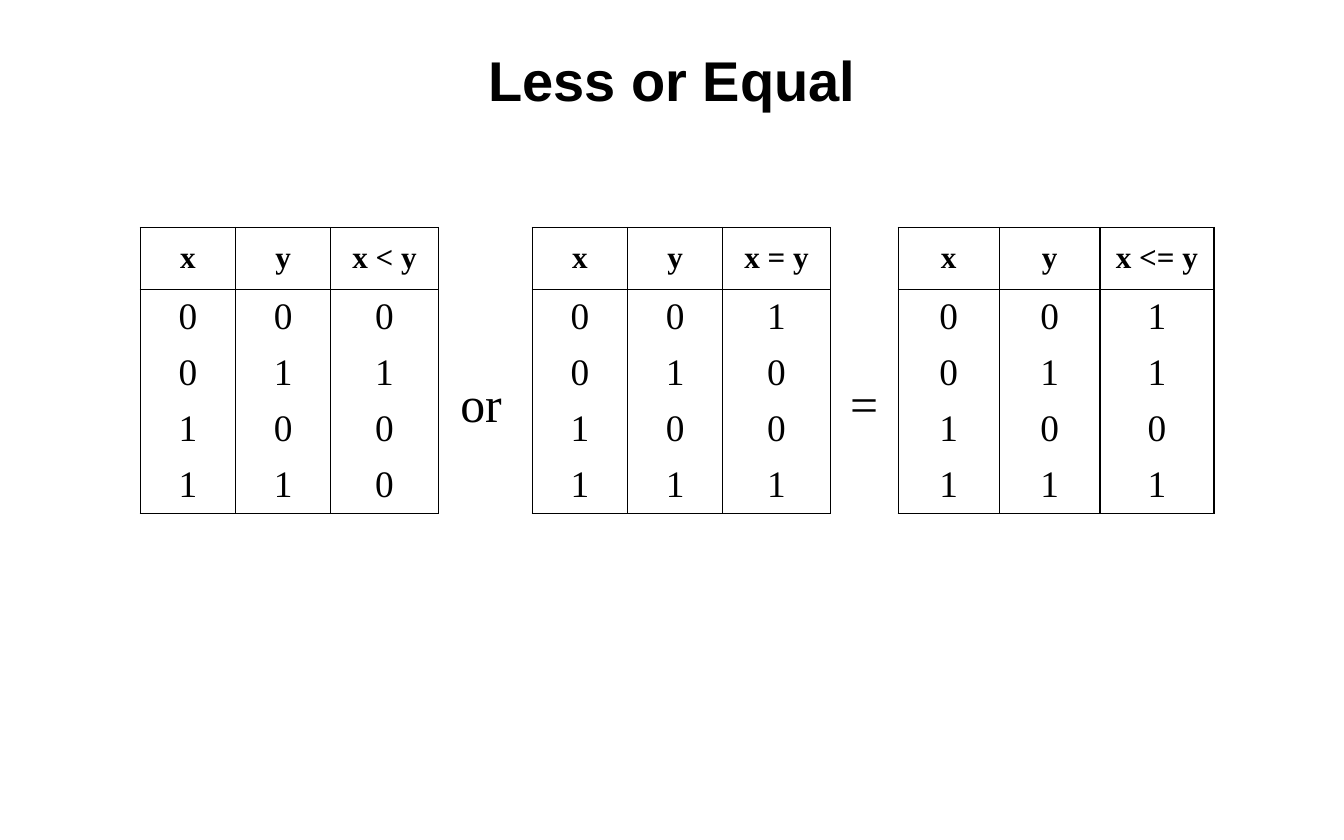
from dataclasses import dataclass
from itertools import product

from lxml.etree import SubElement
from pptx import Presentation
from pptx.dml.color import RGBColor
from pptx.enum.text import MSO_ANCHOR, MSO_AUTO_SIZE, PP_ALIGN
from pptx.oxml.ns import qn
from pptx.util import Cm, Pt


@dataclass(frozen=True)
class Theme:
    ink: RGBColor = RGBColor(0, 0, 0)
    sans: str = "Arial"
    serif: str = "Times New Roman"
    title: Pt = Pt(36)
    sign: Pt = Pt(32)
    head: Pt = Pt(20)
    body: Pt = Pt(24)
    line: Pt = Pt(1)


THEME = Theme()
TOP = Cm(5.16)
HEAD = Cm(1.4)
ROW = Cm(1.27)


def style(para, face, size, bold=False, align=PP_ALIGN.CENTER):
    para.alignment = align
    font = para.font
    font.name, font.size, font.bold = face, size, bold
    font.color.rgb = THEME.ink


def place(shape, left, top, width, height):
    shape.left, shape.top = left, top
    shape.width, shape.height = width, height


def add_title(slide, text, box):
    title = slide.shapes.title
    place(title, *box)
    frame = title.text_frame
    frame.text = text
    frame.vertical_anchor = MSO_ANCHOR.MIDDLE
    style(frame.paragraphs[0], THEME.sans, THEME.title, True)


def set_edges(cell, drawn):
    """Line the sides named in drawn (of L, R, T, B) and clear the others."""
    props = cell._tc.get_or_add_tcPr()
    for spot, side in enumerate("LRTB"):
        line = SubElement(props, qn(f"a:ln{side}"), w=str(THEME.line))
        if side in drawn:
            fill = SubElement(line, qn("a:solidFill"))
            SubElement(fill, qn("a:srgbClr"), val=str(THEME.ink))
        else:
            SubElement(line, qn("a:noFill"))
        props.insert(spot, line)


def add_truth(slide, label, rule, left, top, widths):
    """Table of the values of rule for every pair of bits."""
    pairs = product((0, 1), repeat=2)
    rows = [("x", "y", label)] + [(x, y, int(rule(x, y))) for x, y in pairs]
    last = len(rows) - 1
    frame = slide.shapes.add_table(len(rows), len(widths), left, top,
                                   sum(widths), HEAD + last * ROW)
    table = frame.table
    table.first_row = table.horz_banding = False
    for col, width in zip(table.columns, widths):
        col.width = width
    for r, row in enumerate(rows):
        table.rows[r].height = ROW if r else HEAD
        edges = "LR" + ("T" if r < 2 else "") + ("B" if r in (0, last) else "")
        for c, value in enumerate(row):
            cell = table.cell(r, c)
            cell.text = str(value)
            cell.vertical_anchor = MSO_ANCHOR.MIDDLE
            cell.fill.background()
            set_edges(cell, edges)
            para = cell.text_frame.paragraphs[0]
            para.space_before = Pt(12 if r else 6)
            style(para, THEME.serif, THEME.body if r else THEME.head, r == 0)


def add_sign(slide, text, box):
    frame = slide.shapes.add_textbox(*box).text_frame
    frame.text = text
    frame.word_wrap = False
    frame.auto_size = MSO_AUTO_SIZE.SHAPE_TO_FIT_TEXT
    style(frame.paragraphs[0], THEME.serif, THEME.sign, align=PP_ALIGN.LEFT)


def main():
    deck = Presentation()
    deck.slide_width, deck.slide_height = Cm(30.48), Cm(19.05)
    slide = deck.slides.add_slide(deck.slide_layouts[5])
    add_title(slide, "Less or Equal", (0, Cm(0.85), deck.slide_width, Cm(1.9)))

    slim = Cm(2.16), Cm(2.16), Cm(2.44)
    wide = Cm(2.29), Cm(2.29), Cm(2.58)
    for label, rule, left, widths in (
        ("x < y", lambda x, y: x < y, Cm(3.18), slim),
        ("x = y", lambda x, y: x == y, Cm(12.07), slim),
        ("x <= y", lambda x, y: x <= y, Cm(20.37), wide),
    ):
        add_truth(slide, label, rule, left, TOP, widths)

    for text, left, width in (("or", 10.19, 1.47), ("=", 19.03, 1.14)):
        add_sign(slide, text, (Cm(left), TOP + Cm(3.18), Cm(width), Cm(1.63)))
    deck.save("out.pptx")


if __name__ == "__main__":
    main()
